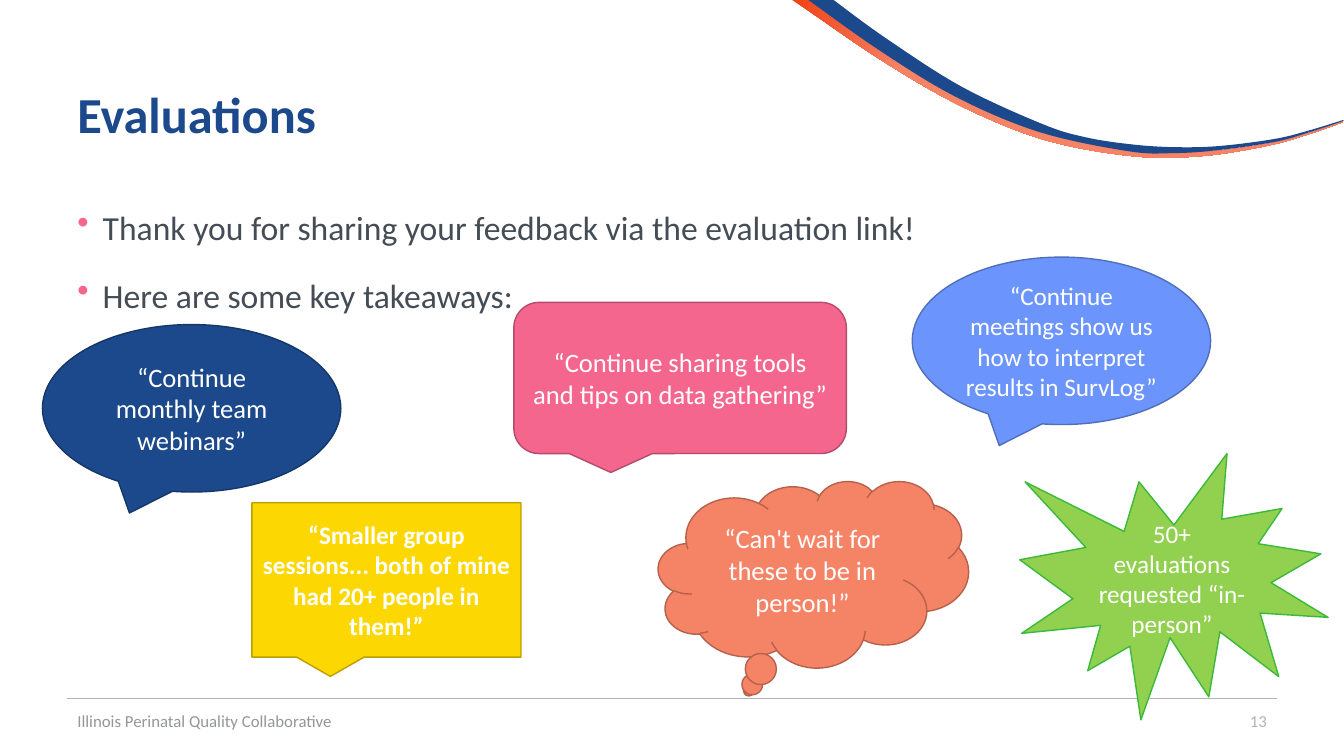
import pptx
import pptx.util
import pptx.dml.color
import pptx.enum.shapes
import pptx.enum.text
import pptx.oxml
import pptx.oxml.ns
import lxml.etree

Cm = pptx.util.Cm
Pt = pptx.util.Pt
SHAPE = pptx.enum.shapes.MSO_SHAPE
ALIGN = pptx.enum.text.PP_ALIGN
ANCHOR = pptx.enum.text.MSO_ANCHOR
qn = pptx.oxml.ns.qn

COLORS = {
    "navy": "1C498B", "navy_edge": "153667",
    "pink": "F5668F", "pink_edge": "B54B6A",
    "coral": "F58366", "coral_edge": "B5614B",
    "yellow": "FDD702", "yellow_edge": "BB9F01",
    "blue": "6B95FD", "blue_edge": "4F6EBB",
    "green": "92D050", "green_edge": "3AB93A",
    "orange": "F04115", "white": "FFFFFF", "body": "444C55",
    "rule": "AFB3B9", "footer": "949699",
}
COLORS = {name: pptx.dml.color.RGBColor.from_string(code) for name, code in COLORS.items()}


def write(shape, lines, size, color, bold=False, align=ALIGN.LEFT, anchor=ANCHOR.MIDDLE):
    frame = shape.text_frame
    frame.word_wrap = True
    frame.vertical_anchor = anchor
    frame.text = "\n".join(lines)
    for para in frame.paragraphs:
        para.alignment = align
        para.font.name = "Calibri"
        para.font.size = Pt(size)
        para.font.bold = bold
        para.font.color.rgb = COLORS[color]
    return frame


def smooth(knots, steps=8):
    ends = [knots[0]] + knots + [knots[-1]]
    curve = [knots[0]]
    for before, start, stop, after in zip(ends, ends[1:], ends[2:], ends[3:]):
        for step in range(1, steps + 1):
            t = step / steps
            curve.append(tuple(
                b + (c - a) * t / 2 + (2 * a - 5 * b + 4 * c - d) * t ** 2 / 2
                + (3 * b - a - 3 * c + d) * t ** 3 / 2
                for a, b, c, d in zip(before, start, stop, after)))
    return curve


deck = pptx.Presentation()
deck.slide_width = Cm(33.87)
deck.slide_height = Cm(19.05)
page = deck.slides.add_slide(deck.slide_layouts[6])

INCH = 2.54
ribbons = [
    ("coral",
     [(8.05, 0), (8.82, 0.54), (9.58, 0.99), (10.39, 1.33), (11.25, 1.5),
      (11.9, 1.51), (12.56, 1.43), (12.99, 1.32), (13.33, 1.2)],
     [(13.33, 1.21), (12.99, 1.33), (12.56, 1.45), (11.91, 1.55), (11.24, 1.55),
      (10.37, 1.39), (9.55, 1.06), (8.78, 0.62), (8.04, 0.12), (7.86, 0)]),
    ("navy",
     [(8.27, 0), (8.79, 0.38), (9.54, 0.86), (10.34, 1.23), (10.76, 1.36), (11.2, 1.43),
      (11.63, 1.46), (12.09, 1.45), (12.64, 1.38), (12.97, 1.3), (13.33, 1.19)],
     [(13.33, 1.2), (12.97, 1.32), (12.64, 1.41), (12.09, 1.49), (11.64, 1.52),
      (11.19, 1.5), (10.31, 1.31), (9.48, 0.96), (8.71, 0.49), (8.02, 0)]),
]
for color, upper, lower in ribbons:
    outline = [(Cm(x * INCH), Cm(y * INCH)) for x, y in smooth(upper) + smooth(lower)]
    builder = page.shapes.build_freeform(*outline[0])
    builder.add_line_segments(outline[1:], close=True)
    ribbon = builder.convert_to_shape()
    ribbon.shadow.inherit = False
    ribbon.line.fill.background()
    if color == "coral":
        ribbon.fill.gradient()
        ribbon.fill.gradient_angle = 0
        first, last = ribbon.fill.gradient_stops
        first.color.rgb, first.position = COLORS["orange"], 0
        last.color.rgb, last.position = COLORS["coral"], 0.2
    else:
        ribbon.fill.solid()
        ribbon.fill.fore_color.rgb = COLORS[color]

rule = page.shapes.add_connector(
    pptx.enum.shapes.MSO_CONNECTOR.STRAIGHT, Cm(1.7), Cm(17.6), Cm(32.18), Cm(17.6))
rule.line.color.rgb = COLORS["rule"]
rule.line.width = Pt(0.5)
lxml.etree.SubElement(rule._element.spPr, qn("a:effectLst"))

title = page.shapes.add_textbox(Cm(1.7), Cm(1.02), Cm(30.48), Cm(3.68))
write(title, ["Evaluations"], 36, "navy", bold=True)

body = page.shapes.add_textbox(Cm(1.7), Cm(5.08), Cm(30.48), Cm(12.09))
points = [
    "Thank you for sharing your feedback via the evaluation link!",
    "Here are some key takeaways:",
]
frame = write(body, points, 24, "body", anchor=ANCHOR.TOP)
for index, para in enumerate(frame.paragraphs):
    para.space_before = Pt(10 if index else 0)
    para.space_after = Pt(10)
    properties = para._p.get_or_add_pPr()
    properties.set("marL", str(Cm(0.64)))
    properties.set("indent", str(-Cm(0.64)))
    bullet_color = lxml.etree.Element(qn("a:buClr"))
    lxml.etree.SubElement(bullet_color, qn("a:srgbClr"), val=str(COLORS["pink"]))
    bullet = lxml.etree.Element(qn("a:buChar"), char="•")
    defaults = properties.find(qn("a:defRPr"))
    defaults.addprevious(bullet_color)
    defaults.addprevious(bullet)

number = page.shapes.add_textbox(Cm(24.56), Cm(17.65), Cm(7.62), Cm(1.02))
write(number, ["13"], 12, "rule", align=ALIGN.RIGHT)
footer = page.shapes.add_textbox(Cm(1.7), Cm(17.65), Cm(11.43), Cm(1.02))
write(footer, ["Illinois Perinatal Quality Collaborative"], 12, "footer")

callouts = [
    (SHAPE.OVAL_CALLOUT, 1.07, 8.18, 7.52, 4.22, "navy", 19,
     "“Continue monthly team webinars”"),
    (SHAPE.ROUNDED_RECTANGULAR_CALLOUT, 12.95, 7.62, 8.38, 3.81, "pink", 19,
     "“Continue sharing tools and tips on data gathering”"),
    (SHAPE.CLOUD_CALLOUT, 16.59, 12.12, 7.82, 4.7, "coral", 19,
     "“Can't wait for these to be in person!”"),
    (SHAPE.RECTANGULAR_CALLOUT, 6.35, 12.67, 6.78, 3.89, "yellow", 18,
     "“Smaller group sessions... both of mine had 20+ people in them!”"),
    (SHAPE.OVAL_CALLOUT, 22.99, 6.48, 7.52, 4.22, "blue", 18,
     "“Continue meetings show us how to interpret results in SurvLog”"),
    (SHAPE.EXPLOSION1, 25.7, 11.43, 7.77, 6.71, "green", 18,
     "50+ evaluations requested “in-person”"),
]
for kind, left, top, width, height, color, size, quote in callouts:
    callout = page.shapes.add_shape(kind, Cm(left), Cm(top), Cm(width), Cm(height))
    callout.shadow.inherit = False
    callout.fill.solid()
    callout.fill.fore_color.rgb = COLORS[color]
    callout.line.color.rgb = COLORS[color + "_edge"]
    callout.line.width = Pt(1)
    write(callout, [quote], size, "white", bold=color == "yellow", align=ALIGN.CENTER)

deck.save("out.pptx")
